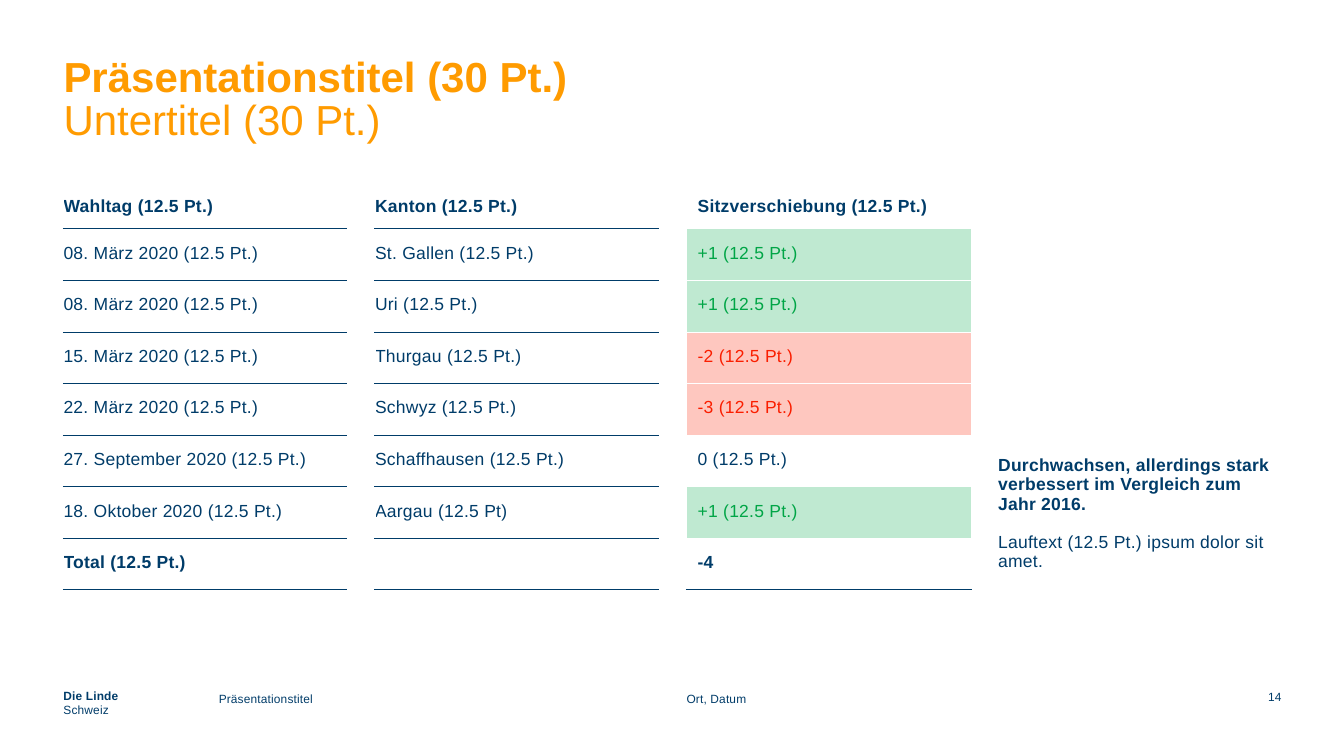
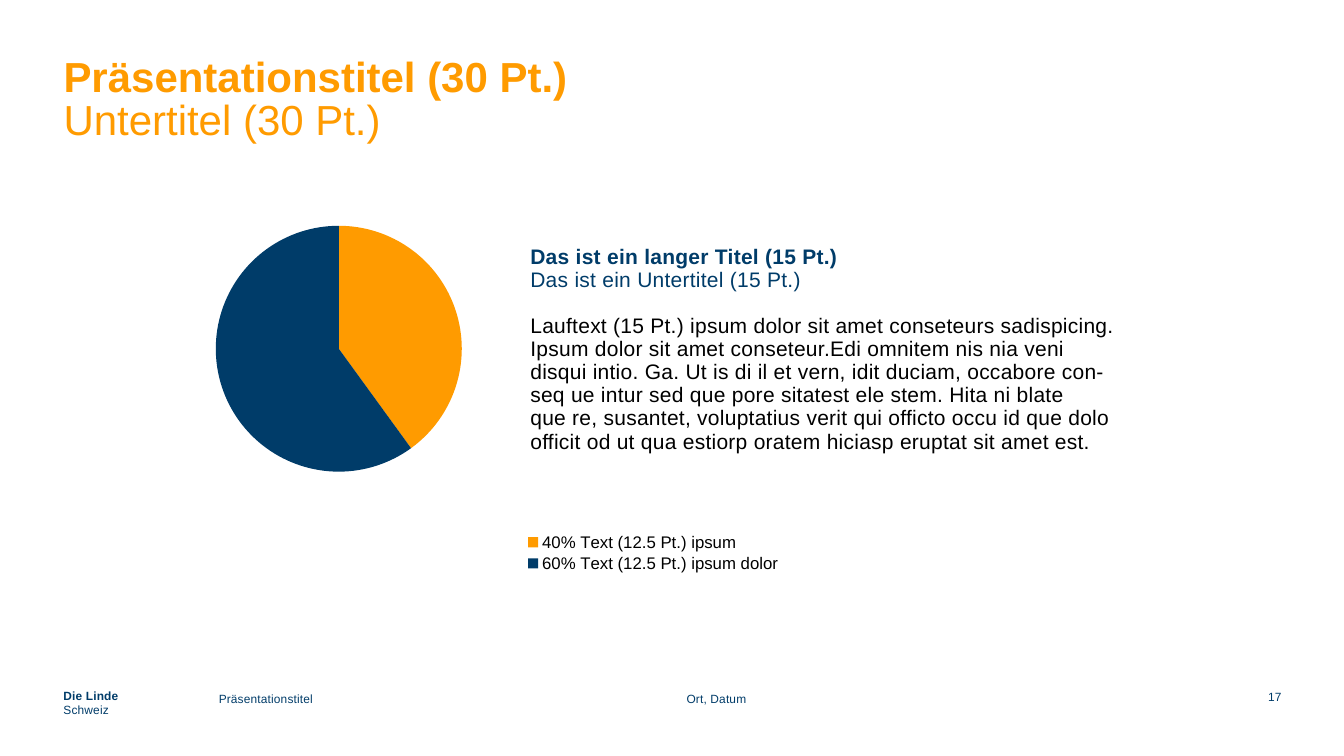
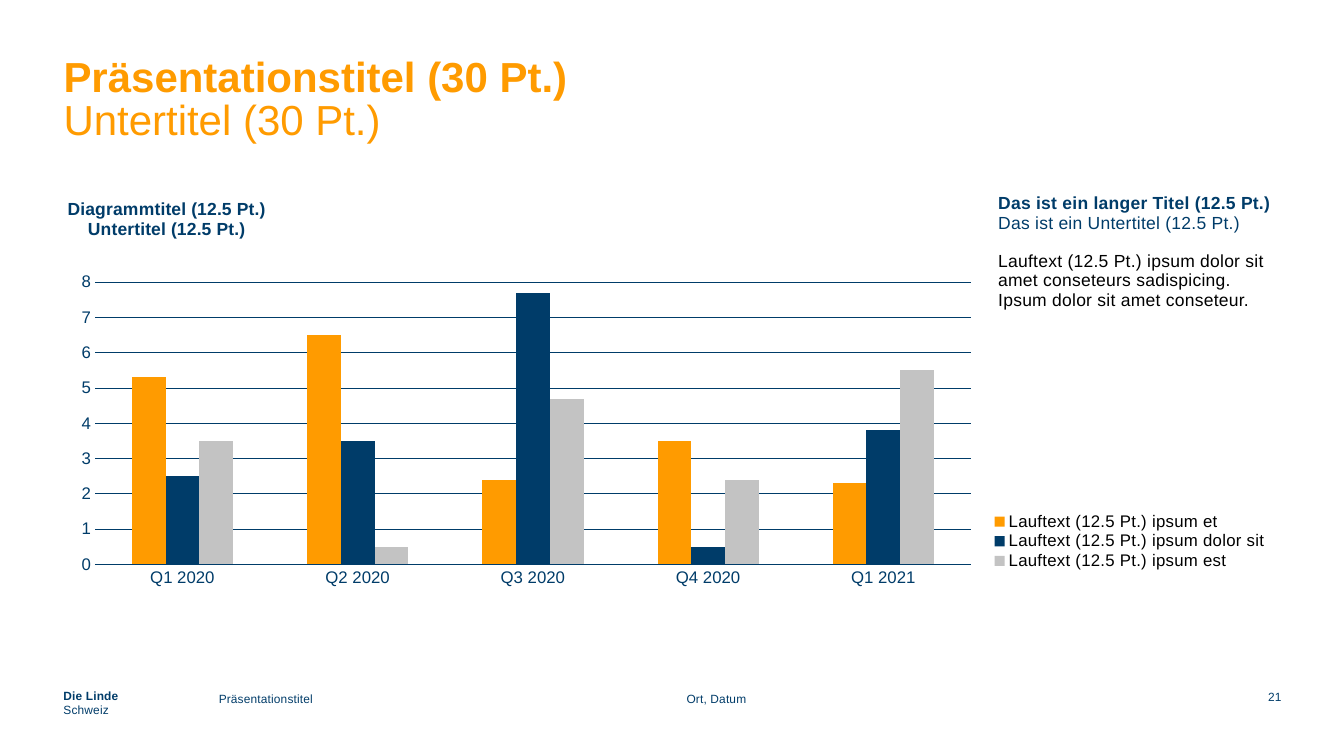
from pptx import Presentation
from pptx.chart.data import CategoryChartData
from pptx.dml.color import RGBColor
from pptx.enum.chart import XL_CHART_TYPE, XL_LEGEND_POSITION, XL_TICK_MARK
from pptx.enum.text import MSO_ANCHOR, PP_ALIGN
from pptx.oxml import parse_xml
from pptx.oxml.ns import nsdecls
from pptx.util import Inches, Pt

# Colours and font
BLUE = RGBColor(0x00, 0x3C, 0x69)
ORANGE = RGBColor(0xFF, 0x9B, 0x00)
GREY = RGBColor(0xC3, 0xC3, 0xC3)
BLACK = RGBColor(0x00, 0x00, 0x00)
WHITE = RGBColor(0xFF, 0xFF, 0xFF)
GREEN = RGBColor(0x00, 0xA5, 0x46)
MINT = RGBColor(0xBF, 0xE9, 0xD1)
RED = RGBColor(0xFA, 0x1E, 0x00)
ROSE = RGBColor(0xFE, 0xC7, 0xBF)
FONT = "Arial"

# Grid of four columns
LEFT, WIDE, GAP = 0.63, 2.81, 0.28
FULL = 4 * WIDE + 3 * GAP
TOP, FOOT = 1.93, 6.85
HEAD, ROW = 0.34, 0.5
BODY = 12.5
THIN = 0.75


def col(n):
    return LEFT + n * (WIDE + GAP)


# Text
def style(font, size, color, bold=False):
    font.name, font.size, font.bold = FONT, Pt(size), bold
    font.color.rgb = color


def write(para, words, size=BODY, color=BLUE, bold=False, spc=20,
          line=0.92, before=0, align=None):
    para.line_spacing = line
    para.alignment = align
    if before:
        para.space_before = Pt(before)
    run = para.add_run()
    run.text = words
    style(run.font, size, color, bold)
    if spc:
        run._r.get_or_add_rPr().set("spc", str(spc))


def text(slide, box, *lines, anchor=MSO_ANCHOR.TOP, **look):
    """Each line is a string, or a pair of a string and its own format."""
    frame = slide.shapes.add_textbox(*map(Inches, box)).text_frame
    frame.word_wrap = True
    frame.vertical_anchor = anchor
    frame.margin_left = frame.margin_right = 0
    frame.margin_top = frame.margin_bottom = 0
    for i, item in enumerate(lines):
        words, own = (item, {}) if isinstance(item, str) else item
        own = {**look, **own}
        join = own.pop("join", False)
        fresh = i and not join
        para = frame.add_paragraph() if fresh else frame.paragraphs[-1]
        write(para, words, **own)


# Title and footer of every slide
def page(deck, number):
    slide = deck.slides.add_slide(deck.slide_layouts[6])
    text(slide, (LEFT, 0.58, FULL, 0.39), "Präsentationstitel (30 Pt.)",
         size=30, color=ORANGE, bold=True, spc=0, line=0.84)
    text(slide, (LEFT, 0.98, FULL, 0.71), "Untertitel (30 Pt.)",
         size=30, color=ORANGE, spc=0)
    small = {"size": 8.5, "spc": 10}
    text(slide, (LEFT, FOOT, 1.47, 0.31),
         ("Die Linde", {"bold": True}), "Schweiz", **small)
    for left, wide, words in ((2.17, 4.26, "Präsentationstitel"),
                              (col(2), 4.03, "Ort, Datum")):
        text(slide, (left, FOOT + 0.02, wide, 0.31), words, **small)
    text(slide, (11.22, 6.84, 1.49, 0.33), str(number),
         align=PP_ALIGN.RIGHT, line=1.0, **small)
    return slide


# Table
def edge(cell, side, color):
    fill = (f'<a:solidFill><a:srgbClr val="{color}"/></a:solidFill>'
            if color else "<a:noFill/>")
    cell._tc.get_or_add_tcPr().insert(0, parse_xml(
        f'<a:{side} {nsdecls("a")} w="{Pt(THIN)}">{fill}</a:{side}>'))


def rule(r, c, last):
    """Colour of the line under row r."""
    if c % 2 or r < 0 or (r == 0 and c == 4):
        return None
    return WHITE if c == 4 and r < last else BLUE


def grid(slide, rows):
    last = len(rows) - 1
    tall = [HEAD] + [ROW] * last
    wide = [WIDE, GAP, WIDE, GAP, WIDE + 0.02]
    table = slide.shapes.add_table(
        len(tall), len(wide), Inches(LEFT), Inches(TOP),
        Inches(sum(wide)), Inches(sum(tall))).table
    table.first_row = table.horz_banding = False
    for part, size in zip(table.columns, wide):
        part.width = Inches(size)
    for part, size in zip(table.rows, tall):
        part.height = Inches(size)
    tones = {"+": (GREEN, MINT), "-": (RED, ROSE)}
    for r, row in enumerate(rows):
        for c in range(len(wide)):
            cell = table.cell(r, c)
            words = "" if c % 2 else row[c // 2]
            ink, back = BLUE, None
            if c == 4 and 0 < r < last:
                ink, back = tones.get(words[0], (BLUE, None))
            if back:
                cell.fill.solid()
                cell.fill.fore_color.rgb = back
            else:
                cell.fill.background()
            pad = (0.16 if r else 0.04) if words else 0
            cell.margin_left = Inches(0.11 if c == 4 else 0)
            cell.margin_right = 0
            cell.margin_top = Inches(pad)
            cell.margin_bottom = Inches(pad if r else 0)
            if words:
                write(cell.text_frame.paragraphs[0], words, color=ink,
                      bold=r in (0, last))
            edge(cell, "lnB", rule(r, c, last))
            edge(cell, "lnT", rule(r - 1, c, last))


# Charts
def place(chart, name, frame, box):
    """Set a chart part to a box given in slide inches."""
    node = chart._chartSpace.xpath(f"c:chart/c:{name}")[0]
    for old in node.xpath("c:layout"):
        node.remove(old)
    inner = '<c:layoutTarget val="inner"/>' if name == "plotArea" else ""
    modes = "".join(f'<c:{k}Mode val="edge"/>' for k in "xy")
    spans = [(box[i] - frame[i]) / frame[2 + i] if i < 2
             else box[i] / frame[i] for i in range(len(box))]
    sizes = "".join(f'<c:{k} val="{v:.4f}"/>' for k, v in zip("xywh", spans))
    node.insert(0 if inner else 1, parse_xml(
        f'<c:layout {nsdecls("c")}><c:manualLayout>{inner}{modes}{sizes}'
        '</c:manualLayout></c:layout>'))


def graph(slide, kind, frame, cats, series, plot, key):
    data = CategoryChartData()
    data.categories = cats
    for name, vals in series:
        data.add_series(name, vals)
    chart = slide.shapes.add_chart(kind, *map(Inches, frame), data).chart
    style(chart.font, 10, BLACK)
    chart.has_title = False
    chart.has_legend = True
    chart.legend.position = XL_LEGEND_POSITION.RIGHT
    chart.legend.include_in_layout = False
    style(chart.legend.font, 12, BLACK)
    place(chart, "plotArea", frame, plot)
    place(chart, "legend", frame, key)
    return chart


def paint(part, color):
    part.format.fill.solid()
    part.format.fill.fore_color.rgb = color
    part.format.line.fill.background()


def pie(slide):
    chart = graph(
        slide, XL_CHART_TYPE.PIE, (LEFT, 0.14, 10.59, 5.98),
        ["40% Text (12.5 Pt.) ipsum", "60% Text (12.5 Pt.) ipsum dolor"],
        [("Series 1", (40, 60))],
        plot=(2.14, 2.24, 2.44, 2.44), key=(4.88, 5.26, 3.2, 0.45))
    chart.plots[0].vary_by_categories = True
    for i, color in enumerate((ORANGE, BLUE)):
        paint(chart.plots[0].series[0].points[i], color)


def bars(slide):
    frame = (LEFT, TOP, FULL, 4.06)
    chart = graph(
        slide, XL_CHART_TYPE.COLUMN_CLUSTERED, frame,
        ["Q1 2020", "Q2 2020", "Q3 2020", "Q4 2020", "Q1 2021"],
        [("Lauftext (12.5 Pt.) ipsum et", (5.3, 6.5, 2.4, 3.5, 2.3)),
         ("Lauftext (12.5 Pt.) ipsum dolor sit", (2.5, 3.5, 7.7, 0.5, 3.8)),
         ("Lauftext (12.5 Pt.) ipsum est", (3.5, 0.5, 4.7, 2.4, 5.5))],
        plot=(0.94, 2.8, 8.69, 2.8), key=(9.78, 5.07, 2.85, 0.6))
    for node in chart.legend._element.xpath(".//a:defRPr"):
        node.set("spc", "20")
    plot = chart.plots[0]
    plot.vary_by_categories = False
    plot.gap_width, plot.overlap = 219, 0
    for one, color in zip(plot.series, (ORANGE, BLUE, GREY)):
        paint(one, color)
    # Axes
    for axis in (chart.category_axis, chart.value_axis):
        axis.major_tick_mark = axis.minor_tick_mark = XL_TICK_MARK.NONE
        style(axis.tick_labels.font, 12, BLUE)
    base, axis = chart.category_axis.format.line, chart.value_axis
    base.color.rgb, base.width = BLUE, Pt(THIN)
    axis.minimum_scale, axis.maximum_scale, axis.major_unit = 0, 8, 1
    axis.format.line.fill.background()
    mesh = axis.major_gridlines.format.line
    mesh.color.rgb, mesh.width = BLUE, Pt(0.5)
    # Chart title
    title = chart.chart_title.text_frame
    lines = (title.paragraphs[0], title.add_paragraph())
    for para, word in zip(lines, ("Diagrammtitel", "Untertitel")):
        write(para, f"{word} (12.5 Pt.)", bold=True, spc=0, line=1.0)
    place(chart, "title", frame, (0.64, TOP))


def main():
    deck = Presentation()
    deck.slide_width, deck.slide_height = Inches(13.33), Inches(7.5)

    # Table of seats
    slide = page(deck, 14)
    grid(slide, [
        ("Wahltag (12.5 Pt.)", "Kanton (12.5 Pt.)",
         "Sitzverschiebung (12.5 Pt.)"),
        ("08. März 2020 (12.5 Pt.)", "St. Gallen (12.5 Pt.)", "+1 (12.5 Pt.)"),
        ("08. März 2020 (12.5 Pt.)", "Uri (12.5 Pt.)", "+1 (12.5 Pt.)"),
        ("15. März 2020 (12.5 Pt.)", "Thurgau (12.5 Pt.)", "-2 (12.5 Pt.)"),
        ("22. März 2020 (12.5 Pt.)", "Schwyz (12.5 Pt.)", "-3 (12.5 Pt.)"),
        ("27. September 2020 (12.5 Pt.)", "Schaffhausen (12.5 Pt.)",
         "0 (12.5 Pt.)"),
        ("18. Oktober 2020 (12.5 Pt.)", "Aargau (12.5 Pt)", "+1 (12.5 Pt.)"),
        ("Total (12.5 Pt.)", "", "-4"),
    ])
    text(slide, (col(3), TOP, WIDE, 3.74),
         ("Durchwachsen, allerdings stark verbessert im Vergleich zum "
          "Jahr 2016.", {"bold": True}),
         ("Lauftext (12.5 Pt.) ipsum dolor sit amet.", {"before": 13.5}),
         anchor=MSO_ANCHOR.BOTTOM)

    # Pie chart
    slide = page(deck, 17)
    pie(slide)
    dark = {"color": BLACK}
    story = ["Ipsum dolor sit amet conseteur.Edi omnitem nis nia veni",
             "disqui intio. Ga. Ut is di il et vern, idit duciam, occabore con-",
             "seq ue intur sed que pore sitatest ele stem. Hita ni blate",
             "que re, susantet, voluptatius verit qui officto occu id que dolo",
             "officit od ut qua estiorp oratem hiciasp eruptat sit amet est."]
    text(slide, (5.26, 2.44, 7.45, 2.4),
         ("Das ist ein langer Titel (15 Pt.)", {"bold": True}),
         "Das ist ein Untertitel (15 Pt.)",
         ("Lauftext (15 Pt.) ipsum dolor sit amet conseteurs sadispicing.",
          {"before": 16, **dark}),
         *((words, dark) for words in story), size=15)

    # Column chart
    slide = page(deck, 21)
    bars(slide)
    text(slide, (col(3), TOP, WIDE, 4.64),
         ("Das ist ein langer Titel (12.5 Pt.) ", {"bold": True}),
         ("Das ist ein Untertitel (12.5 Pt.)", {"join": True}),
         ("Lauftext (12.5 Pt.) ipsum dolor sit amet conseteurs sadispicing. "
          "Ipsum dolor sit amet conseteur.", {"before": 13.5, **dark}))

    deck.save("out.pptx")


if __name__ == "__main__":
    main()
